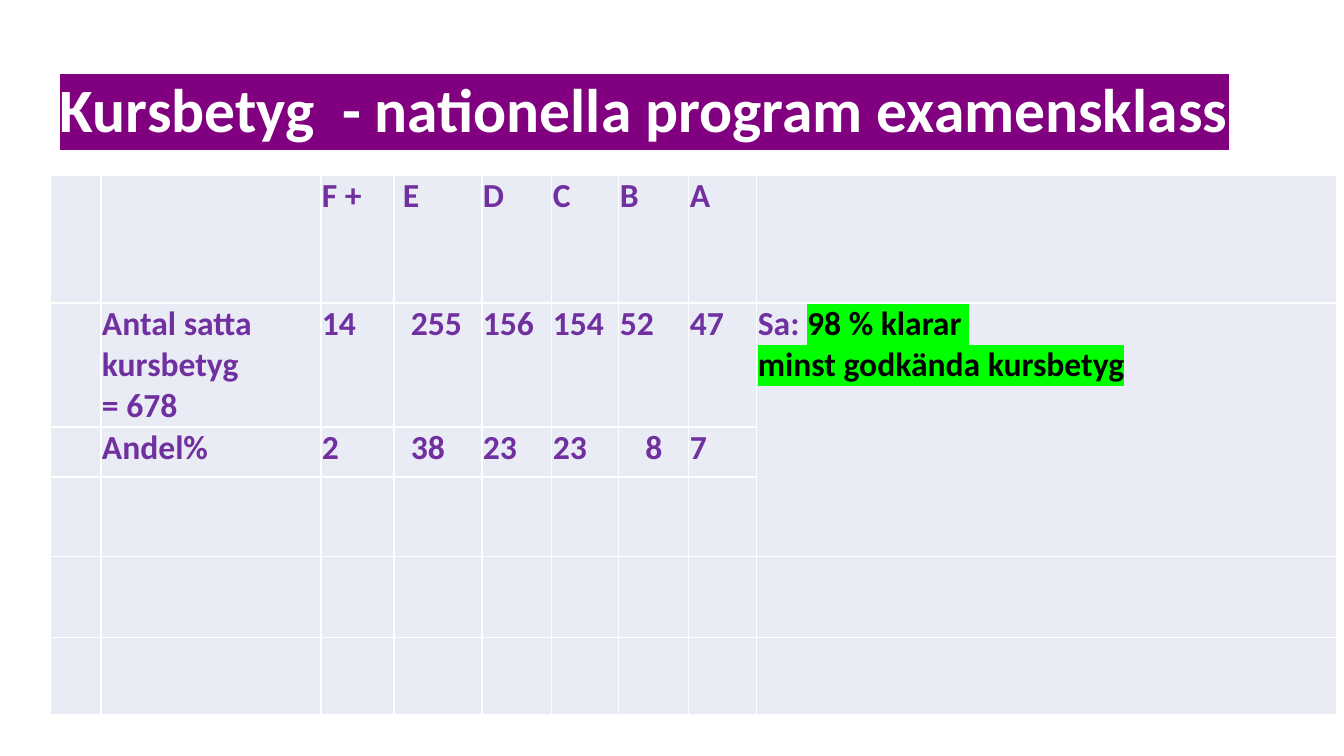
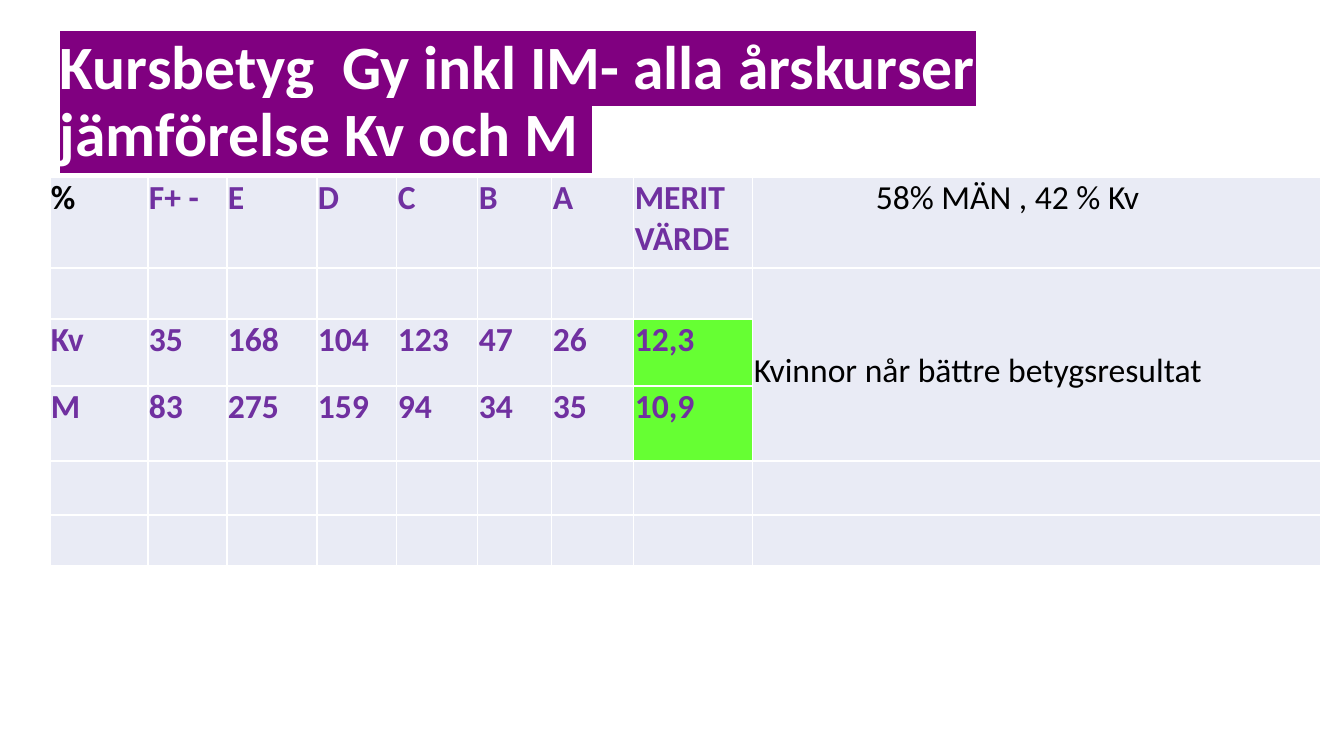
from dataclasses import dataclass

from lxml import etree
from pptx import Presentation
from pptx import util as u
from pptx.dml.color import RGBColor
from pptx.enum import text
from pptx.oxml.ns import qn

PX = 914400 / 100.8


@dataclass(frozen=True)
class Style:
    size: int
    color: str
    bold: bool = True
    highlight: str = ""


class Theme:
    font = "Calibri"
    cell_fill = "E9EBF5"
    merit_fill = "66FF33"
    border = "FFFFFF"
    border_width = 1
    title = Style(44, "FFFFFF", highlight="800080")
    label = Style(24, "7030A0")
    unit = Style(24, "000000")
    marked = Style(24, "000000", highlight="00FF00")
    note = Style(24, "000000", bold=False)


EMPTY_ROW = [""] * 9
TITLE_LEFT, TITLE_WIDTH, TITLE_HEIGHT = 50, 1202, 146
TABLE_LEFT = 50
NOTE_COLUMN = 8

SLIDES = [
    {
        "title": ["Kursbetyg  - nationella program examensklass"],
        "title_top": 40,
        "table_top": 175,
        "columns": [51, 220, 73, 88, 70, 67, 70, 68, 580],
        "heights": [128, 124, 50, 80, 81, 77],
        "rows": [
            ["", "", "F +", "E", "D", "C", "B", "A", ""],
            ["", "Antal satta kursbetyg\n= 678", "14", "255", "156", "154", "52", "47",
             [[("Sa: ", Theme.label), ("98 % klarar ", Theme.marked)],
              [("minst godkända kursbetyg", Theme.marked)]]],
            ["", "Andel%", "2", "38", "23", "23", "8", "7", ""],
            EMPTY_ROW, EMPTY_ROW, EMPTY_ROW,
        ],
        "indents": {(0, 3): 8, (1, 3): 16, (2, 3): 16},
        "centred": {(2, 6)},
    },
    {
        "title": ["Kursbetyg  Gy inkl IM- alla årskurser", "jämförelse Kv och M "],
        "title_top": 30,
        "table_top": 177,
        "columns": [98, 79, 90, 80, 81, 74, 82, 119, 568],
        "heights": [91, 51, 67, 75, 54, 51],
        "rows": [
            [[[("%", Theme.unit)]], "F+ -", "E", "D", "C", "B", "A", "MERIT\nVÄRDE",
             [[("58% MÄN , 42 % Kv", Theme.note)]]],
            EMPTY_ROW[:NOTE_COLUMN] + [[[("Kvinnor når bättre betygsresultat", Theme.note)]]],
            ["Kv", "35", "168", "104", "123", "47", "26", "12,3", ""],
            ["M", "83", "275", "159", "94", "34", "35", "10,9", ""],
            EMPTY_ROW, EMPTY_ROW,
        ],
        "indents": {(0, 8): 122},
        "drops": {(1, 8): 82},
        "fills": {(2, 7): Theme.merit_fill, (3, 7): Theme.merit_fill},
    },
]


def px(length):
    return u.Emu(round(length * PX))


def add_run(paragraph, words, style):
    run = paragraph.add_run()
    run.text = words
    font = run.font
    font.name, font.size, font.bold = Theme.font, u.Pt(style.size), style.bold
    font.color.rgb = RGBColor.from_string(style.color)
    if style.highlight:
        highlight = etree.Element(qn("a:highlight"))
        etree.SubElement(highlight, qn("a:srgbClr"), val=style.highlight)
        run._r.rPr.find(qn("a:latin")).addprevious(highlight)


def add_title(slide, lines, top):
    box = slide.shapes.add_textbox(px(TITLE_LEFT), px(top), px(TITLE_WIDTH), px(TITLE_HEIGHT))
    frame = box.text_frame
    frame.word_wrap = True
    frame.vertical_anchor = text.MSO_ANCHOR.MIDDLE
    paragraph = frame.paragraphs[0]
    paragraph.line_spacing = 0.9
    for index, line in enumerate(lines):
        if index:
            paragraph.add_line_break()
        add_run(paragraph, line, Theme.title)


def format_cell(cell, fill, indent, drop):
    cell.margin_left = px(1 + indent)
    cell.margin_right = px(1)
    cell.margin_top = px(1 + drop)
    cell.margin_bottom = 0
    properties = cell._tc.get_or_add_tcPr()
    for side in ("lnL", "lnR", "lnT", "lnB"):
        line = etree.SubElement(properties, qn(f"a:{side}"), w=str(u.Pt(Theme.border_width)))
        solid = etree.SubElement(line, qn("a:solidFill"))
        etree.SubElement(solid, qn("a:srgbClr"), val=Theme.border)
    cell.fill.solid()
    cell.fill.fore_color.rgb = RGBColor.from_string(fill)


def write_cell(cell, content, centred):
    if isinstance(content, str):
        content = [[(line, Theme.label)] for line in content.split("\n") if line]
    frame = cell.text_frame
    for index, runs in enumerate(content):
        paragraph = frame.add_paragraph() if index else frame.paragraphs[0]
        if centred:
            paragraph.alignment = text.PP_ALIGN.CENTER
        for words, style in runs:
            add_run(paragraph, words, style)


def add_grade_table(slide, data):
    columns, heights = data["columns"], data["heights"]
    table = slide.shapes.add_table(
        len(heights), len(columns), px(TABLE_LEFT), px(data["table_top"]),
        px(sum(columns)), px(sum(heights))).table
    table.first_row = table.horz_banding = False
    for column, width in zip(table.columns, columns):
        column.width = px(width)
    for row, height in zip(table.rows, heights):
        row.height = px(height)
    for row_index, row in enumerate(data["rows"]):
        for column_index, content in enumerate(row):
            place = row_index, column_index
            cell = table.cell(*place)
            format_cell(cell, data.get("fills", {}).get(place, Theme.cell_fill),
                        data["indents"].get(place, 0), data.get("drops", {}).get(place, 0))
            write_cell(cell, content, place in data.get("centred", ()))
    table.cell(1, NOTE_COLUMN).merge(table.cell(3, NOTE_COLUMN))


def main():
    presentation = Presentation()
    presentation.slide_width, presentation.slide_height = px(1344), px(756)
    for data in SLIDES:
        slide = presentation.slides.add_slide(presentation.slide_layouts[6])
        add_title(slide, data["title"], data["title_top"])
        add_grade_table(slide, data)
    presentation.save("out.pptx")


if __name__ == "__main__":
    main()
